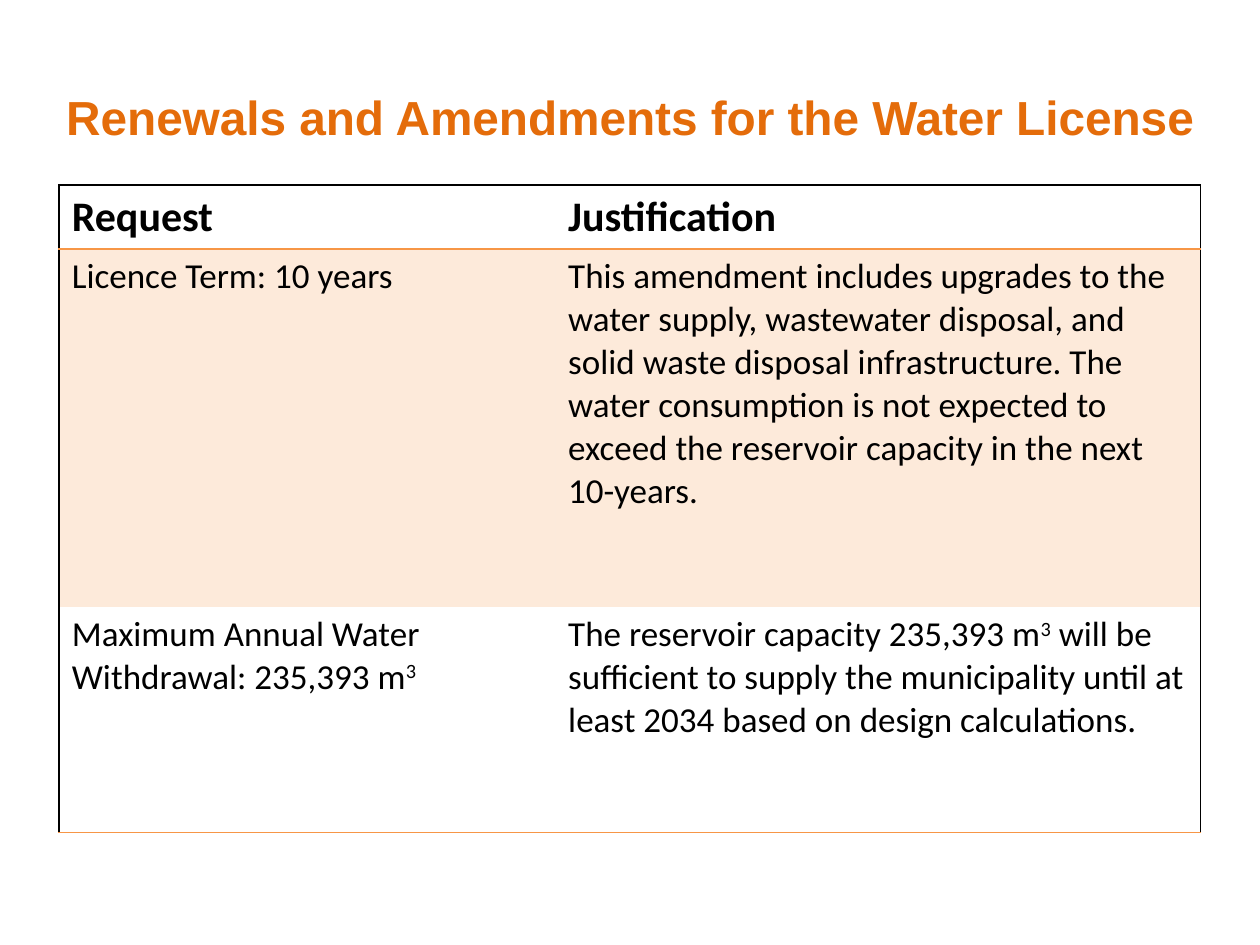
import dataclasses

import pptx
import pptx.dml.color
import pptx.enum.text
import pptx.oxml.ns
import pptx.util
from lxml import etree
from pptx.util import Inches


@dataclasses.dataclass(frozen=True)
class Theme:
    title_font: str = "Arial"
    body_font: str = "Calibri"
    title_color: str = "E46C0A"
    text: str = "000000"
    accent: str = "F79646"
    band_alpha: int = 20
    title_size: float = 27.3
    header_size: float = 24
    body_size: float = 20
    line: float = 1


THEME = Theme()
TITLE = "Renewals and Amendments for the Water License"
HEADER = ["Request", "Justification"]
REQUESTS = [
    [
        ["Licence Term: 10 years"],
        ["This amendment includes upgrades to the water supply, wastewater "
         "disposal, and solid waste disposal infrastructure. The water "
         "consumption is not expected to exceed the reservoir capacity in "
         "the next 10-years."],
    ],
    [
        ["Maximum Annual Water Withdrawal: 235,393 m", "3"],
        ["The reservoir capacity 235,393 m", "3",
         " will be sufficient to supply the municipality until at least 2034 "
         "based on design calculations."],
    ],
]
COL_WIDTHS = [3.94, 5.12]
ROW_HEIGHTS = [0.49, 2.84, 1.79]


def rgb(value):
    return pptx.dml.color.RGBColor.from_string(value)


def add_run(p, text, font, size, color, bold=False, superscript=False):
    r = p.add_run()
    r.text = text
    r.font.name = font
    r.font.size = pptx.util.Pt(size)
    r.font.bold = bold
    r.font.color.rgb = rgb(color)
    if superscript:
        r.font._element.set("baseline", "30000")


def add_child(parent, tag, **attrs):
    return etree.SubElement(parent, pptx.oxml.ns.qn(tag), attrs)


def set_borders(cell, colors):
    tcPr = cell._tc.get_or_add_tcPr()
    for side in "LRTB":
        ln = add_child(tcPr, f"a:ln{side}", w=str(pptx.util.Pt(THEME.line)))
        if side in colors:
            fill = add_child(ln, "a:solidFill")
            add_child(fill, "a:srgbClr", val=colors[side])
        else:
            add_child(ln, "a:noFill")


def set_fill(cell, banded):
    if not banded:
        cell.fill.background()
        return
    cell.fill.solid()
    cell.fill.fore_color.rgb = rgb(THEME.accent)
    color = cell._tc.tcPr.find(
        f"{pptx.oxml.ns.qn('a:solidFill')}/{pptx.oxml.ns.qn('a:srgbClr')}")
    add_child(color, "a:alpha", val=str(THEME.band_alpha * 1000))


def place_title(s, left, top, width, height):
    sp = s.shapes.title
    sp.left, sp.top, sp.width, sp.height = left, top, width, height
    tf = sp.text_frame
    tf.word_wrap = True
    tf.vertical_anchor = pptx.enum.text.MSO_ANCHOR.MIDDLE
    p = tf.paragraphs[0]
    p.alignment = pptx.enum.text.PP_ALIGN.CENTER
    add_run(p, TITLE, THEME.title_font, THEME.title_size,
            THEME.title_color, bold=True)


def cell_borders(row, col):
    colors = {"L" if col == 0 else "R": THEME.text}
    if row == 0:
        colors["T"] = THEME.text
    if row in (0, len(REQUESTS)):
        colors["B"] = THEME.accent
    if row == 1:
        colors["T"] = THEME.accent
    return colors


def place_requests(s, left, top, width, height):
    rows = [[[label] for label in HEADER]] + REQUESTS
    table = s.shapes.add_table(len(rows), len(HEADER), left, top,
                               width, height).table
    table.first_row = False
    table.horz_banding = False
    for column, size in zip(table.columns, COL_WIDTHS):
        column.width = Inches(size)
    for row, size in zip(table.rows, ROW_HEIGHTS):
        row.height = Inches(size)
    for i, row in enumerate(rows):
        header = i == 0
        size = THEME.header_size if header else THEME.body_size
        for j, parts in enumerate(row):
            cell = table.cell(i, j)
            set_borders(cell, cell_borders(i, j))
            set_fill(cell, banded=i % 2 == 1)
            p = cell.text_frame.paragraphs[0]
            for k, text in enumerate(parts):
                add_run(p, text, THEME.body_font, size, THEME.text,
                        bold=header, superscript=k % 2 == 1)


def main():
    prs = pptx.Presentation()
    prs.slide_width, prs.slide_height = Inches(10), Inches(7.5)
    s = prs.slides.add_slide(prs.slide_layouts.get_by_name("Title Only"))
    place_title(s, Inches(0), Inches(0.3), Inches(10), Inches(1.25))
    place_requests(s, Inches(0.47), Inches(1.47),
                   Inches(sum(COL_WIDTHS)), Inches(sum(ROW_HEIGHTS)))
    prs.save("out.pptx")


if __name__ == "__main__":
    main()
